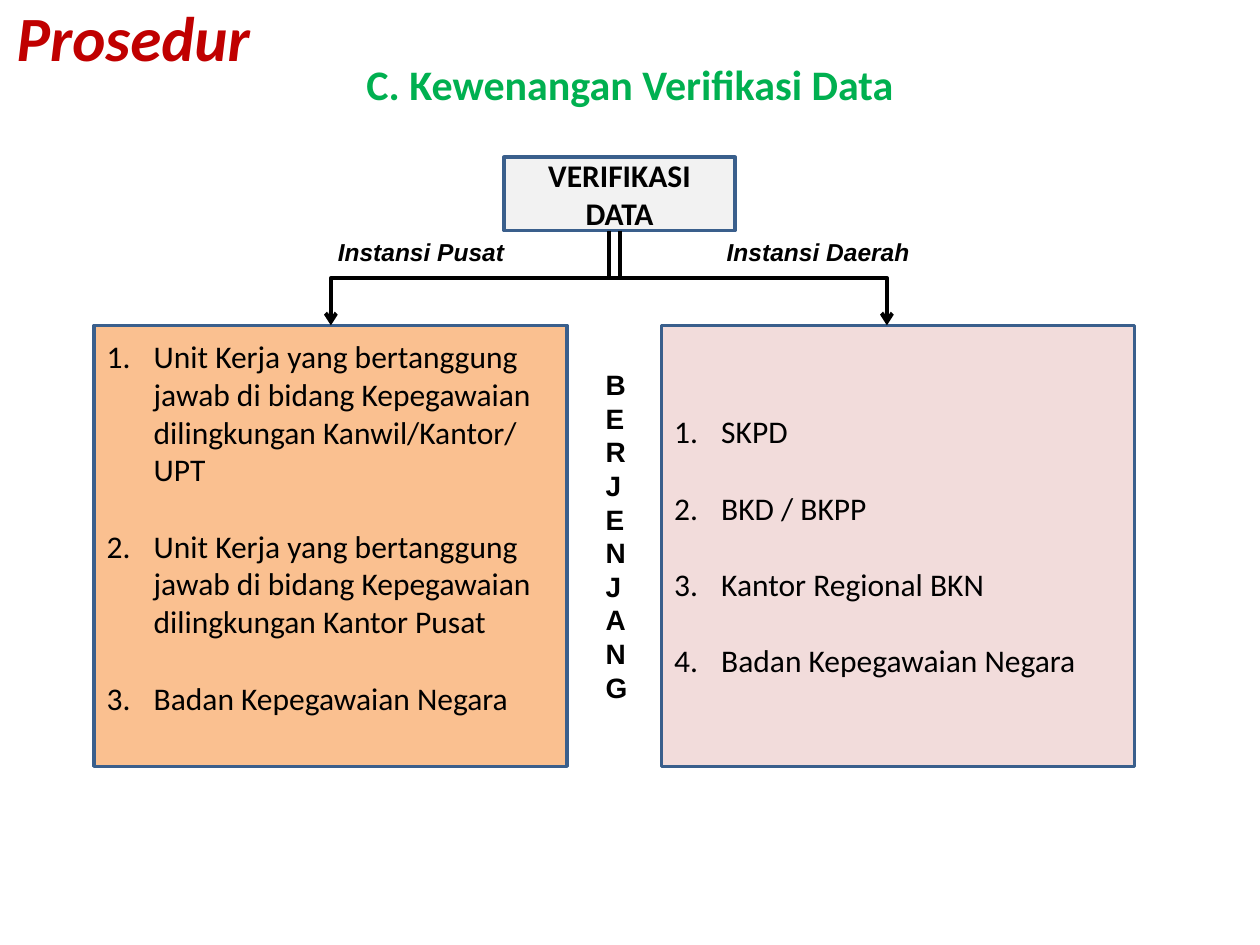
from dataclasses import dataclass

from lxml import etree
from pptx import Presentation
from pptx.dml.color import RGBColor
from pptx.enum.shapes import MSO_CONNECTOR, MSO_SHAPE
from pptx.enum.text import MSO_ANCHOR, PP_ALIGN
from pptx.oxml.ns import qn
from pptx.util import Cm, Pt

LEFT, CENTER, RIGHT = PP_ALIGN.LEFT, PP_ALIGN.CENTER, PP_ALIGN.RIGHT
TOP, MIDDLE = MSO_ANCHOR.TOP, MSO_ANCHOR.MIDDLE
RECTANGLE = MSO_SHAPE.RECTANGLE
ELBOW = MSO_CONNECTOR.ELBOW

BLACK = "000000"
BORDER = "3A5F8C"
NUMBER_INDENT = Cm(0.95)
ITEM_GAP = Pt(22)
BOX_BOTTOM, LIST_TOP = 4.65, 6.56


@dataclass
class Style:
    size: float
    font: str = "Calibri"
    color: str = BLACK
    bold: bool = True
    italic: bool = False
    align: PP_ALIGN = LEFT
    anchor: MSO_ANCHOR = TOP


@dataclass
class Area:
    """Position and size in centimetres."""
    left: float
    top: float
    width: float
    height: float

    def lengths(self) -> list:
        return [Cm(value) for value in (self.left, self.top, self.width, self.height)]


@dataclass
class Label:
    text: str
    area: Area
    style: Style
    wrap: bool = True


@dataclass
class Authority:
    """A numbered list of the offices that verify, in order."""
    left: float
    fill: str
    items: list[str]
    bottom_inset: float


@dataclass
class Branch:
    start_x: float
    end_x: float


LABEL_STYLE = Style(14, "Arial", italic=True)
LIST_STYLE = Style(18, bold=False, anchor=MIDDLE)

LABELS = [
    Label("Prosedur", Area(0, 0, 5.29, 1.48),
          Style(36, color="C00000", italic=True, align=RIGHT, anchor=MIDDLE)),
    Label("C. Kewenangan Verifikasi Data", Area(0, 1.06, 25.4, 1.48),
          Style(24, color="00B050", align=CENTER)),
    Label("Instansi Pusat", Area(6.56, 4.65, 3.88, 0.86), LABEL_STYLE, False),
    Label("Instansi Daerah", Area(14.4, 4.65, 4.22, 0.86), LABEL_STYLE, False),
    Label("\n".join("BERJENJANG"), Area(11.96, 7.29, 0.97, 7.09),
          Style(16, "Arial"), False),
]

AUTHORITIES = [
    Authority(1.9, "FAC090", [
        "Unit Kerja yang bertanggung jawab di bidang Kepegawaian "
        "dilingkungan Kanwil/Kantor/ UPT",
        "Unit Kerja yang bertanggung jawab di bidang Kepegawaian "
        "dilingkungan Kantor Pusat",
        "Badan Kepegawaian Negara",
    ], 0.9),
    Authority(13.34, "F2DCDB", [
        "SKPD", "BKD / BKPP", "Kantor Regional BKN", "Badan Kepegawaian Negara",
    ], 0.13),
]

BRANCHES = [Branch(12.49, 6.67), Branch(12.28, 17.88)]


def rgb(color: str) -> RGBColor:
    return RGBColor.from_string(color)


def write(shape, text: str, style: Style, wrap: bool = True) -> None:
    text_frame = shape.text_frame
    text_frame.text = text
    text_frame.word_wrap = wrap
    text_frame.vertical_anchor = style.anchor
    for paragraph in text_frame.paragraphs:
        paragraph.alignment = style.align
        for run in paragraph.runs:
            font = run.font
            font.name, font.size = style.font, Pt(style.size)
            font.bold, font.italic = style.bold, style.italic
            font.color.rgb = rgb(style.color)


def add_label(slide, label: Label) -> None:
    shape = slide.shapes.add_textbox(*label.area.lengths())
    write(shape, label.text, label.style, label.wrap)


def add_box(slide, area: Area, fill: str, text: str, style: Style):
    shape = slide.shapes.add_shape(RECTANGLE, *area.lengths())
    shape.shadow.inherit = False
    shape.fill.solid()
    shape.fill.fore_color.rgb = rgb(fill)
    shape.line.color.rgb = rgb(BORDER)
    shape.line.width = Pt(2)
    write(shape, text, style)
    return shape


def add_authority(slide, authority: Authority) -> None:
    area = Area(authority.left, LIST_TOP, 9.53, 8.89)
    shape = add_box(slide, area, authority.fill, "\n".join(authority.items), LIST_STYLE)
    shape.text_frame.margin_bottom = Cm(authority.bottom_inset)
    for index, paragraph in enumerate(shape.text_frame.paragraphs):
        if index:
            paragraph.space_before = ITEM_GAP
        properties = paragraph._p.get_or_add_pPr()
        properties.set("marL", str(NUMBER_INDENT))
        properties.set("indent", str(-NUMBER_INDENT))
        etree.SubElement(properties, qn("a:buFont"), typeface="+mj-lt")
        etree.SubElement(properties, qn("a:buAutoNum"), type="arabicPeriod")


def add_branch(slide, branch: Branch) -> None:
    """Turn an elbow by a quarter so that it leaves and arrives vertically."""
    center_x = (branch.start_x + branch.end_x) / 2
    center_y = (BOX_BOTTOM + LIST_TOP) / 2
    half_height = abs(branch.end_x - branch.start_x) / 2
    goes_left = branch.end_x < branch.start_x
    half_width = (LIST_TOP - BOX_BOTTOM) / 2 * (1 if goes_left else -1)
    connector = slide.shapes.add_connector(
        ELBOW,
        Cm(center_x - half_width), Cm(center_y - half_height),
        Cm(center_x + half_width), Cm(center_y + half_height))
    connector.line.color.rgb = rgb(BLACK)
    connector.line.width = Pt(2.25)
    properties = connector._element.spPr
    degrees = 90 if goes_left else 270
    properties.find(qn("a:xfrm")).set("rot", str(degrees * 60000))
    etree.SubElement(properties.find(qn("a:ln")), qn("a:tailEnd"), type="arrow")
    etree.SubElement(properties, qn("a:effectLst"))


def main() -> None:
    presentation = Presentation()
    presentation.slide_width, presentation.slide_height = Cm(25.4), Cm(19.05)
    slide = presentation.slides.add_slide(presentation.slide_layouts[6])
    add_box(slide, Area(10.16, 3.17, 4.66, 1.48), "F2F2F2", "VERIFIKASI DATA",
            Style(18, align=CENTER, anchor=MIDDLE))
    for authority in AUTHORITIES:
        add_authority(slide, authority)
    for branch in BRANCHES:
        add_branch(slide, branch)
    for label in LABELS:
        add_label(slide, label)
    presentation.save("out.pptx")


if __name__ == "__main__":
    main()
